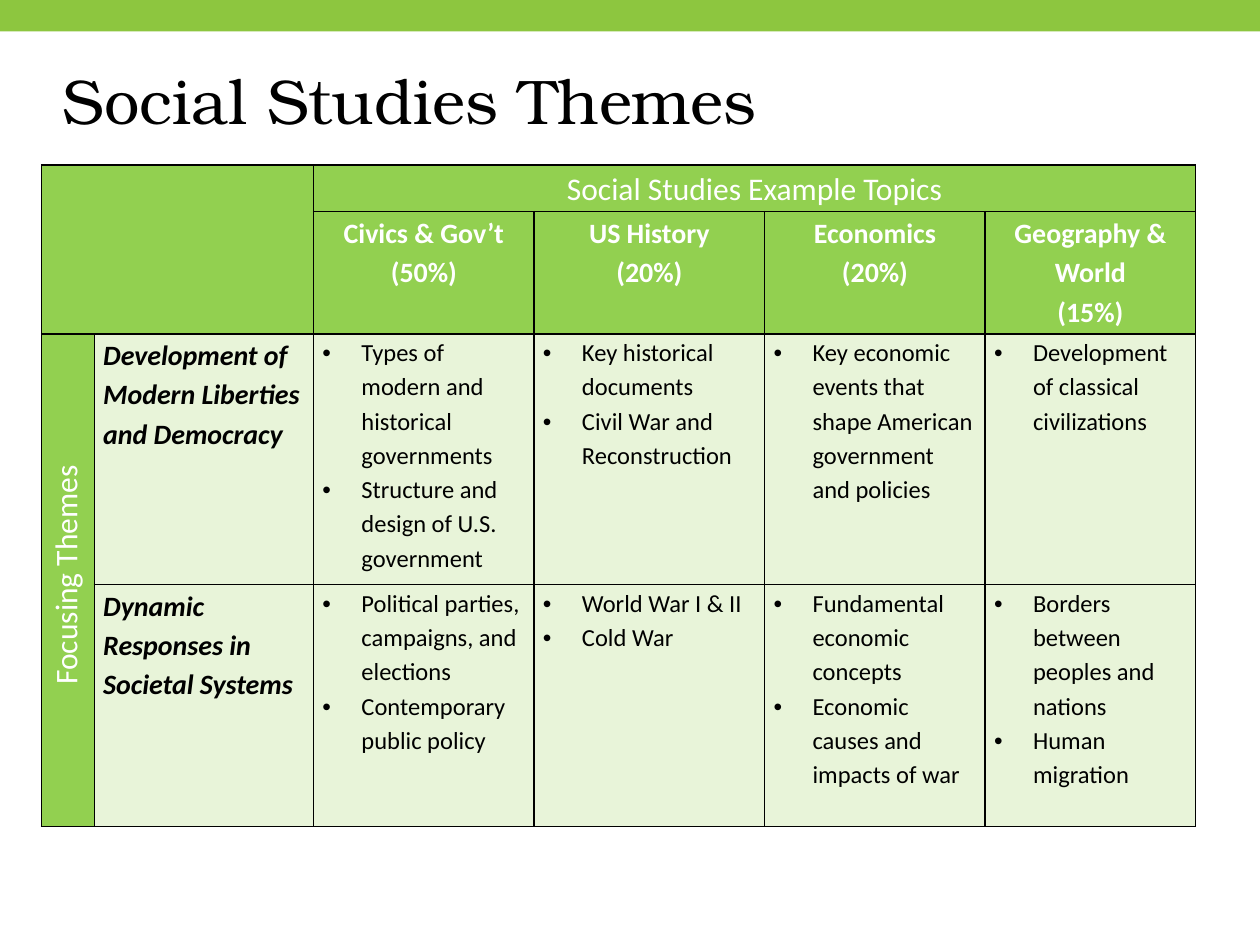
from lxml.etree import SubElement
from pptx import Presentation
from pptx.dml.color import RGBColor
from pptx.enum.shapes import MSO_SHAPE
from pptx.enum.text import MSO_ANCHOR, PP_ALIGN
from pptx.oxml.ns import qn
from pptx.util import Inches, Pt

BAND_GREEN = RGBColor(0x8D, 0xC6, 0x3F)
HEADER_GREEN = RGBColor(0x92, 0xD0, 0x50)
PALE_GREEN = RGBColor(0xE8, 0xF4, 0xD9)
BLACK = RGBColor(0, 0, 0)
WHITE = RGBColor(0xFF, 0xFF, 0xFF)

COLUMN_WIDTHS = (0.42, 1.74, 1.75, 1.83, 1.75, 1.67)
ROW_HEIGHTS = (0.37, 0.97, 1.99, 1.92)
SUBJECTS = (
    ("Civics & Gov’t", "(50%)"),
    ("US History", "(20%)"),
    ("Economics", "(20%)"),
    ("Geography & World", "(15%)"),
)
THEMES = (
    ("Development of Modern Liberties and Democracy", (
        ("Types of modern and historical governments",
         "Structure and design of U.S. government"),
        ("Key historical documents", "Civil War and Reconstruction"),
        ("Key economic events that shape American government and policies",),
        ("Development of classical civilizations",),
    )),
    ("Dynamic Responses in Societal Systems", (
        ("Political parties, campaigns, and elections",
         "Contemporary public policy"),
        ("World War I & II", "Cold War"),
        ("Fundamental economic concepts",
         "Economic causes and impacts of war"),
        ("Borders between peoples and nations", "Human migration"),
    )),
)


class ThemePage:
    """Holds the style and the current page, and adds each kind of element."""

    def __init__(self, page):
        self.page = page
        self.title_font = "TeX Gyre Bonum"
        self.body_font = "Calibri"

    def band(self, left, top, width, height):
        shape = self.page.shapes.add_shape(
            MSO_SHAPE.RECTANGLE, Inches(left), Inches(top), Inches(width), Inches(height))
        shape.shadow.inherit = False
        shape.fill.solid()
        shape.fill.fore_color.rgb = BAND_GREEN
        shape.line.fill.background()

    def span(self, para, text, font, size, color, bold=False, italic=False):
        span = para.add_run()
        span.text = text
        span.font.name = font
        span.font.size = Pt(size)
        span.font.color.rgb = color
        span.font.bold = bold
        span.font.italic = italic

    def title(self, text, left, top, width, height):
        box = self.page.shapes.add_textbox(
            Inches(left), Inches(top), Inches(width), Inches(height))
        frame = box.text_frame
        frame.word_wrap = True
        frame.vertical_anchor = MSO_ANCHOR.TOP
        frame.margin_left = frame.margin_right = Inches(0)
        frame.margin_top = frame.margin_bottom = Inches(0)
        para = frame.paragraphs[0]
        para.line_spacing = 0.9
        self.span(para, text, self.title_font, 36, BLACK)

    def table(self, left, top, widths, heights):
        table = self.page.shapes.add_table(
            len(heights), len(widths), Inches(left), Inches(top),
            Inches(sum(widths)), Inches(sum(heights))).table
        for column, width in zip(table.columns, widths):
            column.width = Inches(width)
        for row, height in zip(table.rows, heights):
            row.height = Inches(height)
        for row in range(len(heights)):
            for column in range(len(widths)):
                header = row < 2 or column == 0
                self.cell_style(table.cell(row, column),
                                HEADER_GREEN if header else PALE_GREEN)
        return table

    def cell_style(self, cell, fill):
        cell.margin_left = cell.margin_right = Inches(0.07)
        cell.margin_top = cell.margin_bottom = Inches(0)
        properties = cell._tc.get_or_add_tcPr()
        for side in ("a:lnL", "a:lnR", "a:lnT", "a:lnB"):
            line = SubElement(properties, qn(side), w=str(Pt(1)))
            solid = SubElement(line, qn("a:solidFill"))
            SubElement(solid, qn("a:srgbClr"), val=str(BLACK))
        cell.fill.solid()
        cell.fill.fore_color.rgb = fill

    def cell_text(self, cell, lines, size, color, bold=False, italic=False,
                  align=PP_ALIGN.LEFT, bullet=False):
        frame = cell.text_frame
        for index, text in enumerate(lines):
            para = frame.add_paragraph() if index else frame.paragraphs[0]
            para.alignment = align
            para.line_spacing = 1.15
            if bullet:
                properties = para._p.get_or_add_pPr()
                properties.set("marL", str(Inches(0.31)))
                properties.set("indent", str(Inches(-0.31)))
                SubElement(properties, qn("a:buFont"), typeface="Arial")
                SubElement(properties, qn("a:buChar"), char="•")
            self.span(para, text, self.body_font, size, color, bold, italic)

    def side_heading(self, cell, text):
        cell._tc.get_or_add_tcPr().set("vert", "vert270")
        self.cell_text(cell, [text], 18, WHITE, align=PP_ALIGN.CENTER)
        properties = cell.text_frame.paragraphs[0]._p.get_or_add_pPr()
        properties.set("marL", str(Inches(0.08)))


def main():
    deck = Presentation()
    deck.slide_width = Inches(10)
    deck.slide_height = Inches(7.5)
    theme_page = ThemePage(deck.slides.add_slide(deck.slide_layouts[6]))
    theme_page.band(0, 0, 10, 0.25)
    theme_page.title("Social Studies Themes", 0.5, 0.56, 9, 1.01)

    table = theme_page.table(0.33, 1.31, COLUMN_WIDTHS, ROW_HEIGHTS)
    table.cell(0, 0).merge(table.cell(1, 1))
    table.cell(0, 2).merge(table.cell(0, 5))
    table.cell(2, 0).merge(table.cell(3, 0))

    theme_page.cell_text(table.cell(0, 2), ["Social Studies Example Topics"],
                         18, WHITE, align=PP_ALIGN.CENTER)
    theme_page.side_heading(table.cell(2, 0), "Focusing Themes")
    for column, subject in enumerate(SUBJECTS, 2):
        theme_page.cell_text(table.cell(1, column), subject, 16, WHITE,
                             bold=True, align=PP_ALIGN.CENTER)
    for row, (theme, topics) in enumerate(THEMES, 2):
        theme_page.cell_text(table.cell(row, 1), [theme], 16, BLACK,
                             bold=True, italic=True)
        for column, items in enumerate(topics, 2):
            theme_page.cell_text(table.cell(row, column), items, 14, BLACK,
                                 bullet=True)
    deck.save("out.pptx")


if __name__ == "__main__":
    main()
